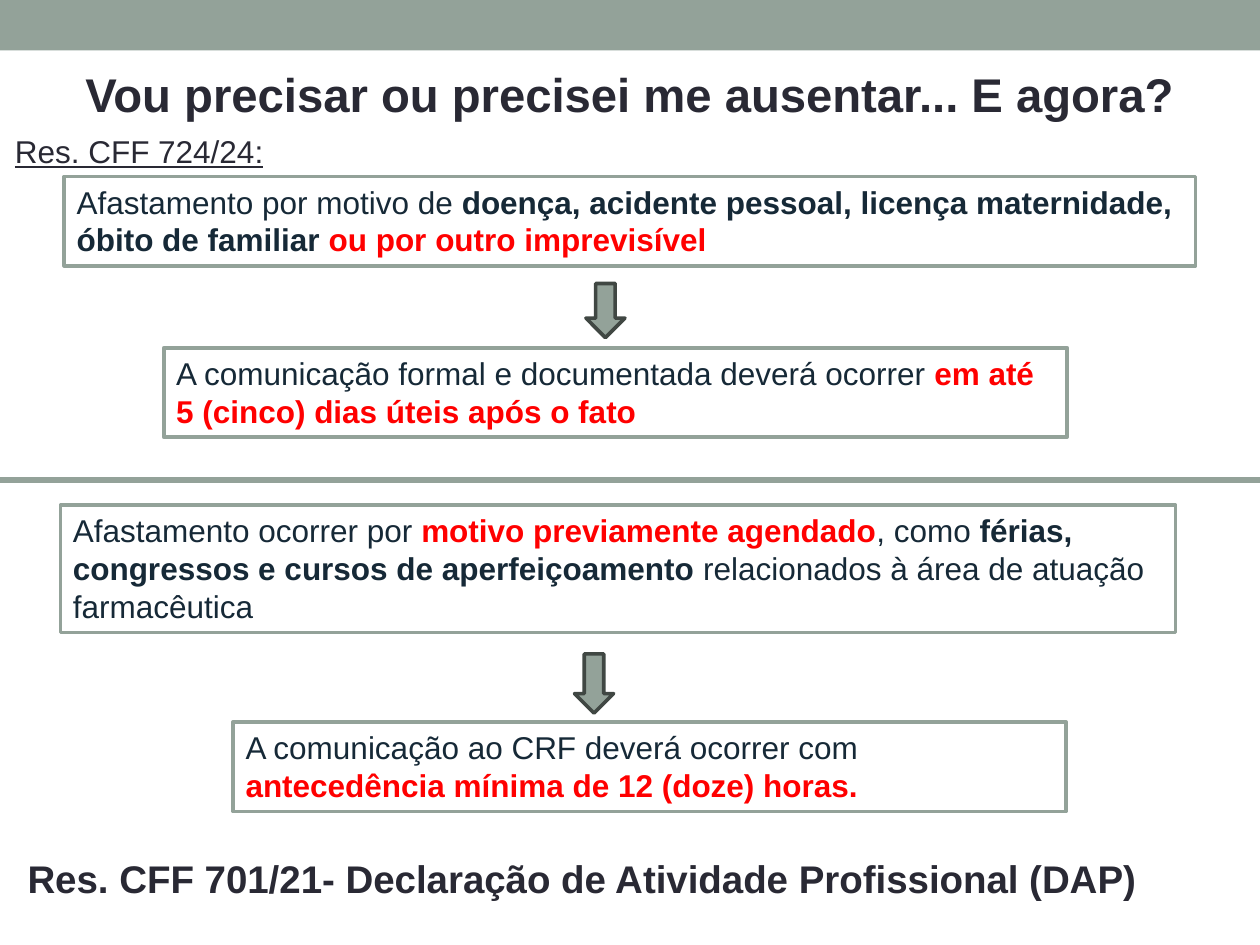
import pptx
import pptx.util
import pptx.dml.color
import pptx.enum.shapes
import pptx.enum.text
import pptx.oxml

Inches = pptx.util.Inches
SHAPES = pptx.enum.shapes.MSO_SHAPE
COLORS = {
    "sage": "93A299",
    "outline": "404743",
    "white": "FFFFFF",
    "heading": "292934",
    "body": "162937",
    "alert": "FF0000",
}


def rgb(name):
    return pptx.dml.color.RGBColor.from_string(COLORS[name])


def write_text(shape, runs, size=18, underline=None, anchor="TOP"):
    frame = shape.text_frame
    frame.word_wrap = True
    frame.vertical_anchor = pptx.enum.text.MSO_ANCHOR[anchor]
    paragraph = frame.paragraphs[0]
    paragraph.alignment = pptx.enum.text.PP_ALIGN.LEFT
    for text, color, bold in runs:
        run = paragraph.add_run()
        run.text = text
        run.font.name = "Arial"
        run.font.size = pptx.util.Pt(size)
        run.font.bold = bold
        run.font.underline = underline
        run.font.color.rgb = rgb(color)


presentation = pptx.Presentation()
presentation.slide_width = Inches(10)
presentation.slide_height = Inches(7.5)
slide = presentation.slides.add_slide(presentation.slide_layouts[6])

header = slide.shapes.add_shape(SHAPES.RECTANGLE, 0, 0, Inches(10), Inches(0.4))
header.shadow.inherit = False
header.fill.solid()
header.fill.fore_color.rgb = rgb("sage")
header.line.fill.background()

labels = [
    (0.58, 0.47, 9.33, 0.56, "Vou precisar ou precisei me ausentar... E agora?", 27, True, None),
    (0.02, 1, 3.07, 0.4, "Res. CFF 724/24:", 18, False, True),
    (0.12, 6.74, 9.88, 0.47, "Res. CFF 701/21- Declaração de Atividade Profissional (DAP)", 22, True, None),
]
for left, top, width, height, text, size, bold, underline in labels:
    label = slide.shapes.add_textbox(Inches(left), Inches(top), Inches(width), Inches(height))
    write_text(label, [(text, "heading", bold)], size=size, underline=underline)

steps = [
    (0.51, 1.4, 8.98, 0.71, [
        ("Afastamento por motivo de ", "body", False),
        ("doença, acidente pessoal, licença maternidade, óbito de familiar ", "body", True),
        ("ou por outro imprevisível", "alert", True),
    ]),
    (1.3, 2.76, 7.17, 0.71, [
        ("A comunicação formal e documentada deverá ocorrer ", "body", False),
        ("em até 5 (cinco) dias úteis após o fato", "alert", True),
    ]),
    (0.48, 4.01, 8.85, 1.01, [
        ("Afastamento ocorrer por ", "body", False),
        ("motivo previamente agendado", "alert", True),
        (", como ", "body", False),
        ("férias, congressos e cursos de aperfeiçoamento", "body", True),
        (" relacionados à área de atuação farmacêutica", "body", False),
    ]),
    (1.85, 5.73, 6.61, 0.71, [
        ("A comunicação ao CRF deverá ocorrer com ", "body", False),
        ("antecedência mínima de 12 (doze) horas.", "alert", True),
    ]),
]
for left, top, width, height, runs in steps:
    box = slide.shapes.add_shape(
        SHAPES.RECTANGLE, Inches(left), Inches(top), Inches(width), Inches(height))
    box.shadow.inherit = False
    box.fill.solid()
    box.fill.fore_color.rgb = rgb("white")
    box.line.color.rgb = rgb("sage")
    box.line.width = pptx.util.Pt(2.08)
    write_text(box, runs)

for left, top, height in [(4.65, 2.25, 0.43), (4.56, 5.19, 0.47)]:
    arrow = slide.shapes.add_shape(
        SHAPES.DOWN_ARROW, Inches(left), Inches(top), Inches(0.31), Inches(height))
    arrow.shadow.inherit = False
    arrow.fill.solid()
    arrow.fill.fore_color.rgb = rgb("sage")
    arrow.line.color.rgb = rgb("outline")
    arrow.line.width = pptx.util.Pt(2.08)

divider = slide.shapes.add_connector(
    pptx.enum.shapes.MSO_CONNECTOR.STRAIGHT, 0, Inches(3.81), Inches(10), Inches(3.81))
divider.line.color.rgb = rgb("sage")
divider.line.width = pptx.util.Pt(3)
divider._element.spPr.append(pptx.oxml.parse_xml(
    '<a:effectLst xmlns:a="http://schemas.openxmlformats.org/drawingml/2006/main"/>'))

presentation.save("out.pptx")
